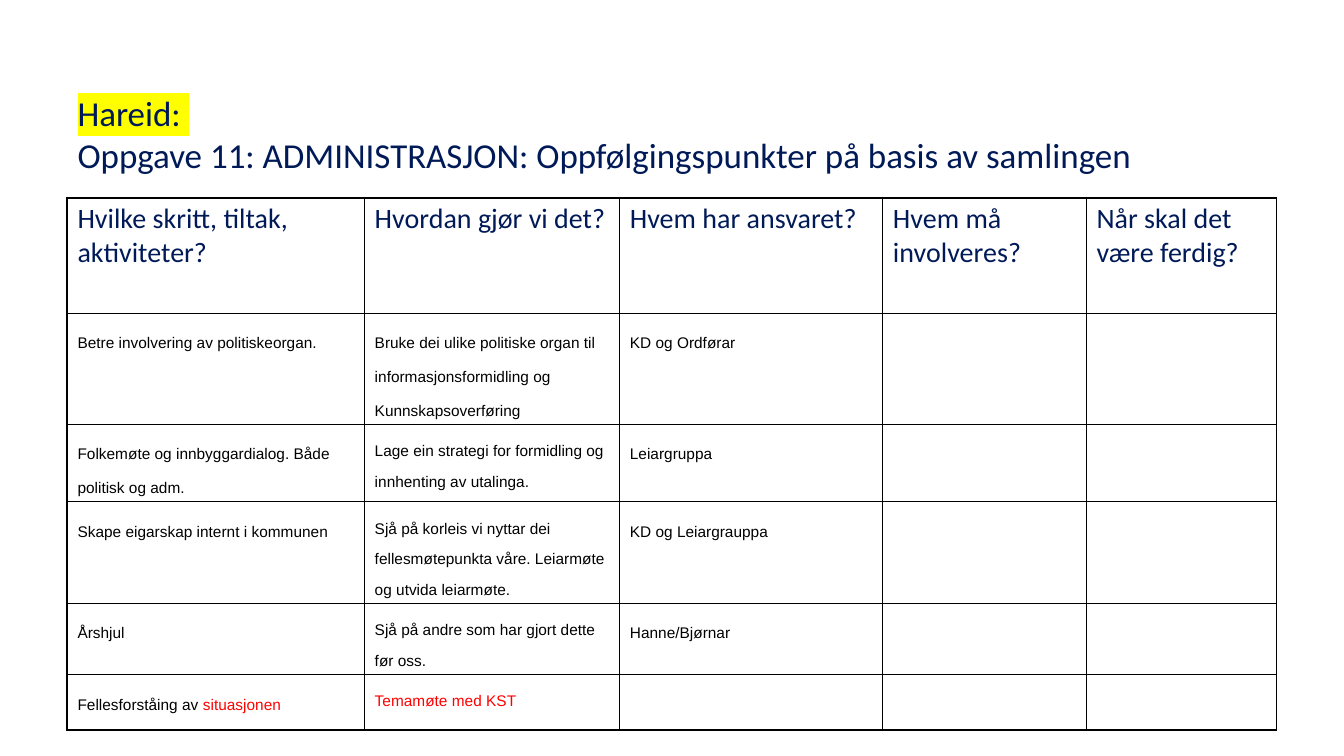
from lxml.etree import SubElement
from pptx import Presentation
from pptx.dml.color import RGBColor
from pptx.enum.text import MSO_ANCHOR, PP_ALIGN
from pptx.oxml.ns import qn
from pptx.util import Cm, Pt

NAVY, BLACK, RED, YELLOW = "001A58", "000000", "FF0000", "FFFF00"
THIN, THICK = 0.75, 1.63

COLUMNS = [7.49, 6.43, 6.63, 5.13, 4.8]
HEADER_HEIGHT, ROW_HEIGHT = 2.92, 1.4
HEADERS = ["Hvilke skritt, tiltak, aktiviteter?", "Hvordan gjør vi det?",
           "Hvem har ansvaret?", "Hvem må involveres?",
           "Når skal det være ferdig?"]
# Each cell lists (text, colour) runs; the second number of a row is the
# line spacing of its "how" column.
ACTIONS = [
    ([("Betre involvering av politiskeorgan.", BLACK)],
     [("Bruke dei ulike politiske organ til informasjonsformidling og "
       "Kunnskapsoverføring", BLACK)], 24,
     [("KD og Ordførar", BLACK)]),
    ([("Folkemøte og innbyggardialog. Både politisk og adm.", BLACK)],
     [("Lage ein strategi for formidling og innhenting av utalinga.", BLACK)], 21.8,
     [("Leiargruppa", BLACK)]),
    ([("Skape eigarskap internt i kommunen", BLACK)],
     [("Sjå på korleis vi nyttar dei fellesmøtepunkta våre. Leiarmøte og "
       "utvida leiarmøte.", BLACK)], 21.8,
     [("KD og Leiargrauppa", BLACK)]),
    ([("Årshjul", BLACK)],
     [("Sjå på andre som har gjort dette før oss.", BLACK)], 21.8,
     [("Hanne/Bjørnar", BLACK)]),
    ([("Fellesforståing av", BLACK), (" situasjonen", RED)],
     [("Temamøte med KST", RED)], 21.8,
     []),
]


def rgb(colour):
    return RGBColor.from_string(colour)


class SlideBuilder:
    def __init__(self, slide):
        self.slide = slide

    def style(self, font, name, size, colour):
        font.name, font.size = name, Pt(size)
        font.color.rgb = rgb(colour)

    def title(self, marked, text):
        """Fill the title with a highlighted first line and a plain second line."""
        sp = self.slide.shapes.title
        sp.left, sp.top, sp.width, sp.height = Cm(1.7), Cm(1.78), Cm(30.48), Cm(3.18)
        tf = sp.text_frame
        tf.vertical_anchor = MSO_ANCHOR.MIDDLE
        p = tf.paragraphs[0]
        p.alignment = PP_ALIGN.LEFT
        self.style(p.font, "Calibri", 25, NAVY)
        r = p.add_run()
        r.text = marked
        highlight = SubElement(r.font._element, qn("a:highlight"))
        SubElement(highlight, qn("a:srgbClr"), val=YELLOW)
        p.add_line_break()
        p.add_run().text = text

    def borders(self, cell, widths):
        """Draw the left, right, top and bottom edges with widths in points."""
        tcPr = cell._tc.get_or_add_tcPr()
        for edge, width in zip(("lnL", "lnR", "lnT", "lnB"), widths):
            ln = SubElement(tcPr, qn(f"a:{edge}"), w=str(Pt(width)))
            fill = SubElement(ln, qn("a:solidFill"))
            SubElement(fill, qn("a:srgbClr"), val=BLACK)

    def cell_text(self, cell, runs, font, size, spacing):
        p = cell.text_frame.paragraphs[0]
        p.line_spacing = Pt(spacing)
        self.style(p.font, font, size, runs[0][1])
        for text, colour in runs:
            r = p.add_run()
            r.text = text
            if colour != runs[0][1]:
                r.font.color.rgb = rgb(colour)

    def table(self, left, top, columns, headers, actions):
        last = len(actions)
        height = HEADER_HEIGHT + ROW_HEIGHT * last
        table = self.slide.shapes.add_table(
            last + 1, len(columns), Cm(left), Cm(top),
            Cm(sum(columns)), Cm(height)).table
        table.first_row = table.horz_banding = False
        for column, width in zip(table.columns, columns):
            column.width = Cm(width)
        for i, row in enumerate(table.rows):
            row.height = Cm(ROW_HEIGHT if i else HEADER_HEIGHT)
            for j, cell in enumerate(row.cells):
                self.borders(cell, (THIN if j else THICK, THIN,
                                    THIN if i else THICK,
                                    THICK if i == last else THIN))
                cell.fill.background()
        for j, header in enumerate(headers):
            self.cell_text(table.cell(0, j), [(header, NAVY)], "Calibri", 20, 24)
        for i, (step, how, how_spacing, owner) in enumerate(actions, 1):
            for j, (runs, spacing) in enumerate(
                    [(step, 24), (how, how_spacing), (owner, 24)]):
                if runs:
                    self.cell_text(table.cell(i, j), runs, "Arial", 11, spacing)


def main():
    prs = Presentation()
    prs.slide_width, prs.slide_height = Cm(33.87), Cm(19.05)
    builder = SlideBuilder(prs.slides.add_slide(prs.slide_layouts[5]))
    builder.title("Hareid: ", "Oppgave 11: ADMINISTRASJON: "
                  "Oppfølgingspunkter på basis av samlingen")
    builder.table(1.7, 4.98, COLUMNS, HEADERS, ACTIONS)
    prs.save("out.pptx")


if __name__ == "__main__":
    main()
